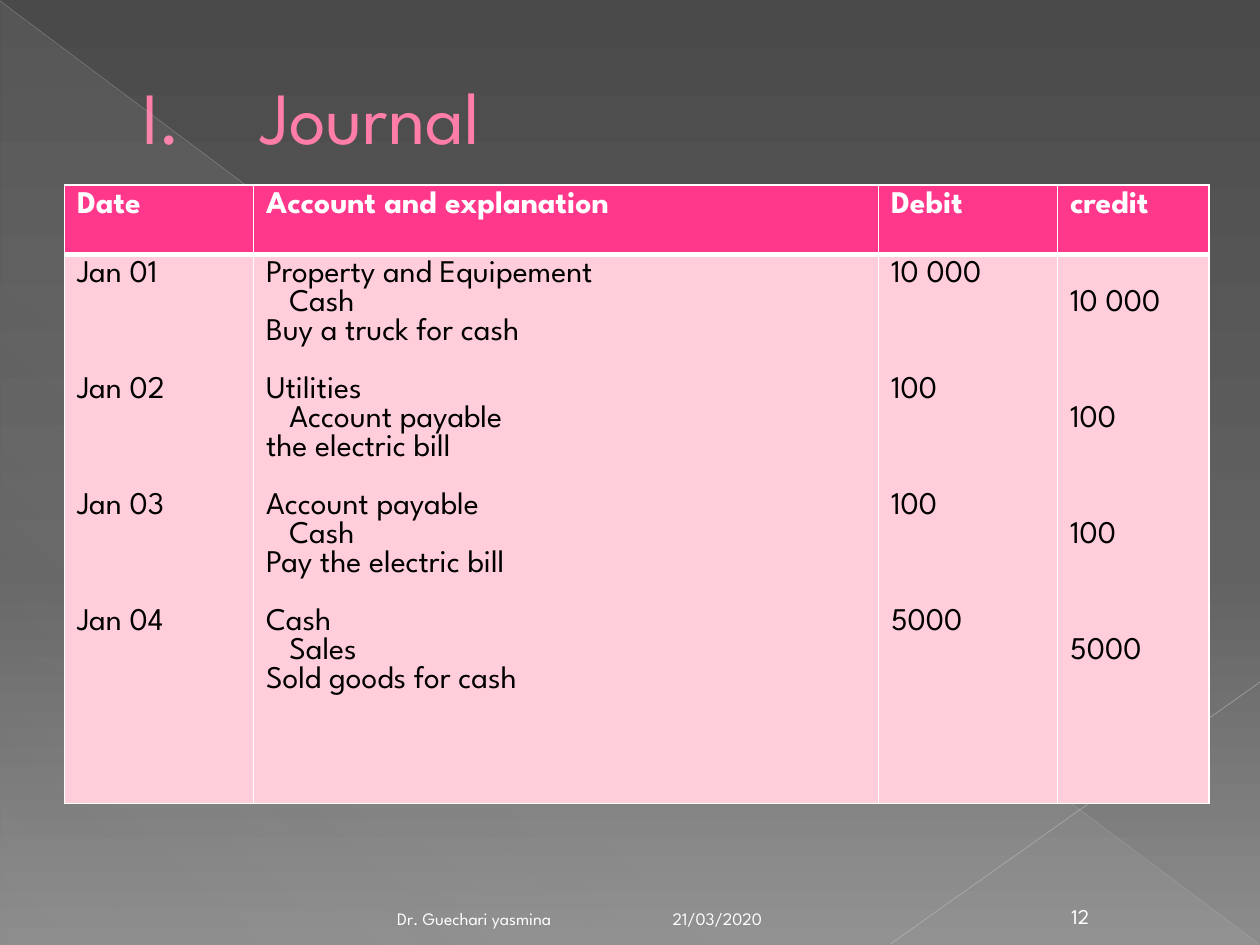
from lxml.etree import SubElement
from pptx import Presentation
from pptx.dml.color import RGBColor
from pptx.enum.shapes import MSO_CONNECTOR, MSO_SHAPE
from pptx.enum.text import MSO_ANCHOR, PP_ALIGN
from pptx.oxml import parse_xml
from pptx.oxml.ns import nsdecls, qn
from pptx.util import Cm, Pt

COLORS = {
    "white": "FFFFFF", "black": "000000", "title": "FF7DA7", "title_edge": "B12761",
    "header": "FF388C", "body": "FFCEDA", "veil": "D2D2D2",
    "bg_top": "4A4A4A", "bg_mid": "626262", "bg_bottom": "8C8C8C",
    "diagonal": "BFBFBF", "corner": "C6C6C6",
}
HEADERS = ["Date", "Account and explanation", "Debit", "credit"]
ENTRIES = [  # date, debited account, credited account, explanation, amount
    ("Jan 01", "Property and Equipement", "Cash", "Buy a truck for cash", "10 000"),
    ("Jan 02", "Utilities", "Account payable", "the electric bill", "100"),
    ("Jan 03", "Account payable", "Cash", "Pay the electric bill", "100"),
    ("Jan 04", "Cash", "Sales", "Sold goods for cash", "5000"),
]
LINE = 16.56  # height of one 18 pt table line, in points


def set_attrs(obj, values):
    for name, value in values.items():
        setattr(obj, name, value)


def solid_xml(color):
    return f'<a:solidFill><a:srgbClr val="{COLORS[color]}"/></a:solidFill>'


class SlideBuilder:
    font = "League Spartan"

    def __init__(self, slide):
        self.s = slide

    def style(self, p, size, color, bold=False):
        for r in p.runs:
            set_attrs(r.font, {"name": self.font, "size": Pt(size), "bold": bold})
            r.font.color.rgb = RGBColor.from_string(COLORS[color])

    def gradient(self, parent, stops, angle):
        """Replace the solid fill of parent by stops of (position, color, opacity)."""
        gs = "".join(
            f'<a:gs pos="{pos * 1000}"><a:srgbClr val="{COLORS[color]}">'
            f'<a:alpha val="{opacity * 1000}"/></a:srgbClr></a:gs>'
            for pos, color, opacity in stops)
        grad = parse_xml(f'<a:gradFill {nsdecls("a")} rotWithShape="1"><a:gsLst>{gs}</a:gsLst>'
                         f'<a:lin ang="{angle * 60000}" scaled="0"/></a:gradFill>')
        parent.replace(parent.find(qn("a:solidFill")), grad)

    def background(self, stops, angle):
        self.s.background.fill.solid()
        self.gradient(self.s._element.find(".//" + qn("p:bgPr")), stops, angle)

    def triangle(self, box, stops, angle):
        sp = self.s.shapes.add_shape(MSO_SHAPE.RIGHT_TRIANGLE, *map(Cm, box))
        sp.shadow.inherit = False
        sp.line.fill.background()
        sp.fill.solid()
        self.gradient(sp._element.spPr, stops, angle)

    def line(self, ends, color, width, opacity):
        sp = self.s.shapes.add_connector(MSO_CONNECTOR.STRAIGHT, *map(Cm, ends))
        sp.line.width = Pt(width)
        sp.line.color.rgb = RGBColor.from_string(COLORS[color])
        spPr = sp._element.spPr
        SubElement(spPr.find(".//" + qn("a:srgbClr")), qn("a:alpha"), val=str(opacity * 1000))
        SubElement(spPr, qn("a:effectLst"))

    def title(self, text, box):
        """Place a title numbered with a Roman numeral."""
        sp = self.s.shapes.title
        set_attrs(sp, dict(zip(("left", "top", "width", "height"), map(Cm, box))))
        tf = sp.text_frame
        set_attrs(tf, {"text": text, "vertical_anchor": MSO_ANCHOR.MIDDLE})
        p = tf.paragraphs[0]
        p.alignment = PP_ALIGN.LEFT
        self.style(p, 42, "title")
        rPr = p.runs[0].font._element
        rPr.insert(0, parse_xml(
            f'<a:ln {nsdecls("a")} w="{Pt(0.5)}">{solid_xml("title_edge")}</a:ln>'))
        pPr = p._p.get_or_add_pPr()
        pPr.set("marL", str(Cm(3.73)))
        pPr.set("indent", str(Cm(-2.39)))
        SubElement(pPr, qn("a:buFont"), typeface=self.font)
        SubElement(pPr, qn("a:buAutoNum"), type="romanUcPeriod")

    def text(self, text, box, size, align, margin_right=0.25):
        tf = self.s.shapes.add_textbox(*map(Cm, box)).text_frame
        set_attrs(tf, {"word_wrap": True, "vertical_anchor": MSO_ANCHOR.BOTTOM,
                       "margin_right": Cm(margin_right), "text": text})
        tf.paragraphs[0].alignment = align
        self.style(tf.paragraphs[0], size, "white")

    def table(self, pos, col_widths, row_heights):
        size = sum(col_widths), sum(row_heights)
        table = self.s.shapes.add_table(len(row_heights), len(col_widths),
                                        *map(Cm, pos + size)).table
        for col, width in zip(table.columns, col_widths):
            col.width = Cm(width)
        for row, height in zip(table.rows, row_heights):
            row.height = Cm(height)
        return table

    def cell(self, cell, lines, fill, color, bold=False, bottom=1):
        """Fill a cell with lines of (text, left indent in cm, space before in points)."""
        tf = cell.text_frame
        for i, (text, indent, before) in enumerate(lines):
            p = tf.add_paragraph() if i else tf.paragraphs[0]
            p.text = text
            self.style(p, 18, color, bold)
            if indent:
                p._p.get_or_add_pPr().set("marL", str(Cm(indent)))
            if i and before:
                p.space_before = Pt(before)
        cell.fill.solid()
        cell.fill.fore_color.rgb = RGBColor.from_string(COLORS[fill])
        edges = {"lnL": 1, "lnR": 1, "lnT": 1, "lnB": bottom}
        for i, (edge, width) in enumerate(edges.items()):
            cell._tc.get_or_add_tcPr().insert(i, parse_xml(
                f'<a:{edge} {nsdecls("a")} w="{Pt(width)}">{solid_xml("white")}</a:{edge}>'))


def fill_journal(b, table):
    for cell, text in zip(table.rows[0].cells, HEADERS):
        b.cell(cell, [(text, 0, 0)], "header", "white", bold=True, bottom=3)
    dates = [(e[0], 0, 3 * LINE) for e in ENTRIES]
    amounts = [(e[4], 0, 3 * LINE) for e in ENTRIES]
    accounts = []
    for _, debited, credited, explanation, _ in ENTRIES:
        accounts += [(debited, 0, LINE), (credited, 0.47, 0), (explanation, 0, 0)]
    body = table.rows[1].cells
    for cell, lines in zip(body, (dates, accounts, amounts, amounts)):
        b.cell(cell, lines, "body", "black")
    # Credits stand one line below debits
    body[3].margin_top = Cm(0.13) + Pt(LINE)


def main():
    prs = Presentation()
    set_attrs(prs, {"slide_width": Cm(25.4), "slide_height": Cm(19.05)})
    b = SlideBuilder(prs.slides.add_slide(prs.slide_layouts[5]))
    b.background([(0, "bg_top", 100), (60, "bg_mid", 100), (100, "bg_bottom", 100)], 90)
    b.triangle((0.02, 0.04, 25.36, 19), [(0, "veil", 10), (70, "veil", 8), (100, "veil", 1)], 133)
    b.line((0, 0.02, 25.38, 19.03), "diagonal", 0.39, 35)
    b.line((25.4, 13.75, 17.95, 19.03), "corner", 0.47, 45)
    b.title("Journal", (1.27, 0.74, 22.86, 3.18))
    fill_journal(b, b.table((1.3, 3.73), (3.81, 12.6, 3.61, 3.05), (1.4, 11.07)))
    top, height = 18.01, 0.84
    b.text("21/03/2020", (13.31, top, 5.92, height), 10, PP_ALIGN.LEFT)
    b.text("12", (21.08, top, 1.4, height), 12, PP_ALIGN.CENTER)
    b.text("Dr. Guechari yasmina", (1.27, top, 11.84, height), 10, PP_ALIGN.RIGHT, margin_right=2)
    prs.save("out.pptx")


if __name__ == "__main__":
    main()
